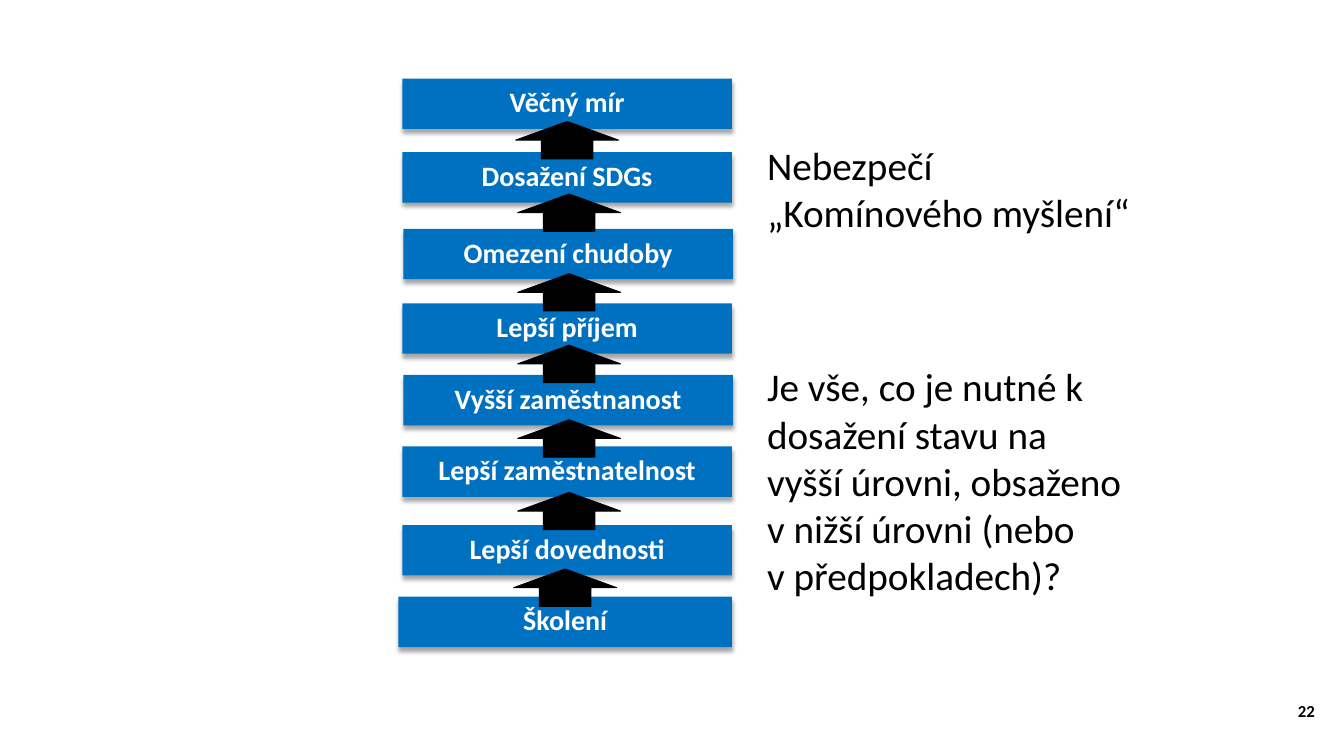
"""Build the results-chain slide: stacked steps, up arrows and two comments."""
from lxml.etree import SubElement
from pptx import Presentation
from pptx.dml.color import RGBColor
from pptx.enum.shapes import MSO_SHAPE
from pptx.enum.text import MSO_ANCHOR, PP_ALIGN
from pptx.oxml.ns import qn
from pptx.util import Inches, Pt

COLORS = {"step": "0070C0", "arrow": "000000", "text": "000000", "label": "FFFFFF"}
STEPS = [
    ("Školení", 3.95, 5.92, 3.31),
    ("Lepší dovednosti", 3.99, 5.21, 3.27),
    ("Lepší zaměstnatelnost", 3.99, 4.43, 3.27),
    ("Vyšší zaměstnanost", 4, 3.72, 3.27),
    ("Lepší příjem", 3.99, 3.01, 3.27),
    ("Omezení chudoby", 4, 2.27, 3.27),
    ("Dosažení SDGs", 3.99, 1.51, 3.27),
    ("Věčný mír", 3.99, 0.78, 3.27),
]
STEP_H = 0.5
ARROWS = [(5.42, 5.32), (5.46, 4.56), (5.46, 3.84), (5.46, 3.1),
          (5.46, 2.39), (5.46, 1.6), (5.44, 0.88)]
ARROW_SIZE = (0.37, 1.02)
WARNING = ["Nebezpečí", "„Komínového myšlení“"]
QUESTION = ["Je vše, co je nutné k dosažení stavu na vyšší úrovni, "
            "obsaženo v nižší úrovni (nebo \vv předpokladech)?"]
BODY = {"size": Pt(28), "bold": False}
LABEL = {"size": Pt(20), "bold": True}
NUMBER = {"size": Pt(12), "bold": True}
NOTES = [
    (WARNING, (7.51, 1.35, 3.86, 1.04), BODY, PP_ALIGN.LEFT),
    (QUESTION, (7.51, 3.55, 3.74, 2.46), BODY, PP_ALIGN.LEFT),
    (["22"], (12.34, 6.9, 0.8, 0.4), NUMBER, PP_ALIGN.RIGHT),
]


def rgb(name):
    return RGBColor.from_string(COLORS[name])


def write(tf, lines, font, color, align):
    tf.word_wrap = True
    for i, line in enumerate(lines):
        p = tf.add_paragraph() if i else tf.paragraphs[0]
        p.text = line
        p.alignment = align
        for r in p.runs:
            for key, value in {"name": "Calibri", **font}.items():
                setattr(r.font, key, value)
            r.font.color.rgb = rgb(color)


def add_block(s, kind, box, color):
    sp = s.shapes.add_shape(kind, *map(Inches, box))
    sp.shadow.inherit = False
    sp.fill.solid()
    sp.fill.fore_color.rgb = rgb(color)
    return sp


def add_shadow(sp):
    effects = sp._element.spPr.find(qn("a:effectLst"))
    shadow = SubElement(effects, qn("a:outerShdw"), blurRad="38100", dist="38100",
                        dir="5400000", rotWithShape="0")
    black = SubElement(shadow, qn("a:srgbClr"), val="000000")
    SubElement(black, qn("a:alpha"), val="35000")


def add_step(s, label, left, top, width):
    sp = add_block(s, MSO_SHAPE.RECTANGLE, (left, top, width, STEP_H), "step")
    sp.line.fill.background()
    add_shadow(sp)
    tf = sp.text_frame
    for side in ("left", "top", "right", "bottom"):
        setattr(tf, f"margin_{side}", Inches(0.03))
    tf.vertical_anchor = MSO_ANCHOR.MIDDLE
    write(tf, [label], LABEL, "label", PP_ALIGN.CENTER)
    tf.paragraphs[0].line_spacing = 0.9


def add_arrow(s, left, top):
    sp = add_block(s, MSO_SHAPE.RIGHT_ARROW, (left, top, *ARROW_SIZE), "arrow")
    sp.rotation = 270
    sp.line.color.rgb = rgb("arrow")
    sp.line.width = Pt(0.75)


def main():
    prs = Presentation()
    prs.slide_width, prs.slide_height = Inches(13.33), Inches(7.5)
    s = prs.slides.add_slide(prs.slide_layouts[6])
    for step in STEPS:
        add_step(s, *step)
    for arrow in ARROWS:
        add_arrow(s, *arrow)
    for lines, box, font, align in NOTES:
        tf = s.shapes.add_textbox(*map(Inches, box)).text_frame
        write(tf, lines, font, "text", align)
    prs.save("out.pptx")


if __name__ == "__main__":
    main()
